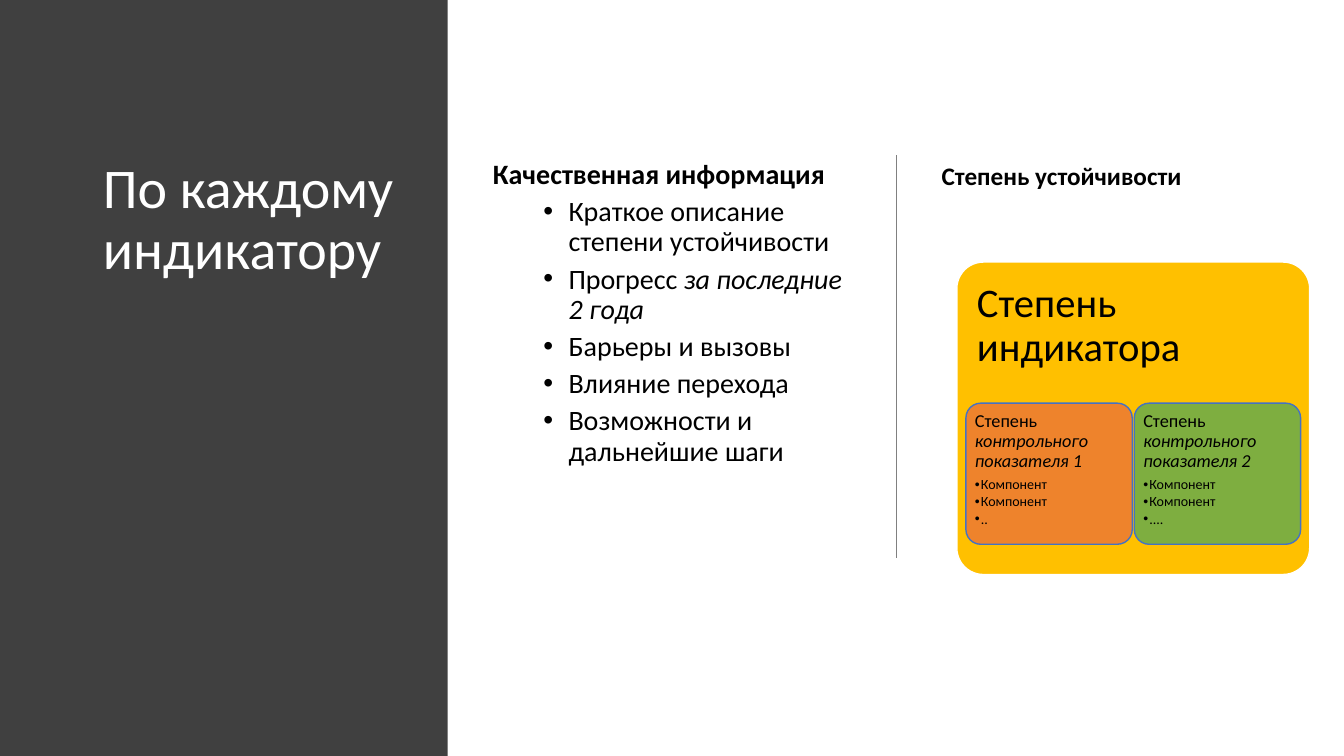
from lxml import etree
from pptx import Presentation
from pptx.dml.color import RGBColor
from pptx.enum.shapes import MSO_CONNECTOR, MSO_SHAPE
from pptx.enum.text import MSO_ANCHOR, MSO_AUTO_SIZE, PP_ALIGN
from pptx.oxml.ns import qn
from pptx.util import Pt

RECT, ROUND = MSO_SHAPE.RECTANGLE, MSO_SHAPE.ROUNDED_RECTANGLE
STRAIGHT = MSO_CONNECTOR.STRAIGHT
TOP, LEFT = MSO_ANCHOR.TOP, PP_ALIGN.LEFT
GROW, FIXED = MSO_AUTO_SIZE.SHAPE_TO_FIT_TEXT, MSO_AUTO_SIZE.NONE

BLACK = RGBColor(0x00, 0x00, 0x00)
WHITE = RGBColor(0xFF, 0xFF, 0xFF)
DARK = RGBColor(0x40, 0x40, 0x40)
GRAY = RGBColor(0x80, 0x80, 0x80)
GOLD = RGBColor(0xFF, 0xC0, 0x00)
ORANGE = RGBColor(0xED, 0x7D, 0x31)
GREEN = RGBColor(0x70, 0xAD, 0x47)
BLUE = RGBColor(0x44, 0x72, 0xC4)

EMU = 9144  # 100 px to the inch
WIDE, HIGH = 1333, 750


def px(*nums):
    return [num * EMU for num in nums]


def put(item, vals):
    for name, val in vals.items():
        setattr(item, name, val)


class Deck:
    def __init__(self, font):
        self.font = font
        self.prs = Presentation()
        self.prs.slide_width, self.prs.slide_height = px(WIDE, HIGH)
        self.slide = self.prs.slides.add_slide(self.prs.slide_layouts[5])
        self.shapes = self.slide.shapes

    def shape(self, kind, box, fill, line=None, round=None, alpha=None):
        item = self.shapes.add_shape(kind, *px(*box))
        item.shadow.inherit = False
        item.fill.solid()
        item.fill.fore_color.rgb = fill
        if alpha:
            color = item.fill._xPr.find(qn("a:solidFill"))[0]
            etree.SubElement(color, qn("a:alpha"), val=str(alpha * 1000))
        if line is None:
            item.line.fill.background()
        else:
            item.line.color.rgb = line
            item.line.width = Pt(1)
        if round:
            item.adjustments[0] = round
        return item

    def rule(self, x, top, end, color):
        item = self.shapes.add_connector(STRAIGHT, *px(x, top, x, end))
        item.line.color.rgb = color
        item.line.width = Pt(1)
        etree.SubElement(item._element.spPr, qn("a:effectLst"))

    def para(self, para, runs, size, color=BLACK, bold=False, bullet=None, **form):
        """Runs alternate between upright and italic text."""
        put(para, {"alignment": LEFT, **form})
        if bullet:
            para.level = 1
            props = para._p.get_or_add_pPr()
            props.set("marL", str(bullet * EMU))
            props.set("indent", str(-min(bullet, 25) * EMU))
            etree.SubElement(props, qn("a:buFont"), typeface="Arial")
            etree.SubElement(props, qn("a:buChar"), char="•")
        for i, text in enumerate(runs):
            run = para.add_run()
            run.text = text
            put(run.font, {"name": self.font, "size": Pt(size),
                           "bold": bold, "italic": i % 2 == 1})
            run.font.color.rgb = color

    def fill(self, frame, paras, **form):
        put(frame, {"word_wrap": True, "auto_size": FIXED,
                    "vertical_anchor": TOP, **form})
        for i, vals in enumerate(paras):
            para = frame.add_paragraph() if i else frame.paragraphs[0]
            self.para(para, **vals)

    def text(self, box, paras, inset=None, **form):
        if inset:
            sides = ("margin_left", "margin_top", "margin_right", "margin_bottom")
            form.update(zip(sides, px(*inset)))
        self.fill(self.shapes.add_textbox(*px(*box)).text_frame, paras, **form)

    def title(self, box, text, size, color):
        item = self.shapes.title
        put(item, dict(zip(("left", "top", "width", "height"), px(*box))))
        self.fill(item.text_frame, [{"runs": [text], "size": size,
                                     "color": color, "line_spacing": 0.9}])
        # Bring the title in front of the side panel
        self.shapes._spTree.append(item._element)


def main():
    deck = Deck("Calibri")

    # Side panel and title
    deck.shape(RECT, (0, 0, 444, HIGH), DARK)
    deck.title((92, 154, 317, 477), "По каждому индикатору", 40, WHITE)

    # Quality points
    points = [
        ["Краткое описание степени устойчивости"],
        ["Прогресс ", "за последние 2 года"],
        ["Барьеры и вызовы"],
        ["Влияние перехода"],
        ["Возможности и дальнейшие шаги"],
    ]
    head = {"runs": ["Качественная информация"], "size": 20, "bold": True,
            "line_spacing": 0.9, "space_before": Pt(10)}
    deck.text((479, 154, 375, 477), [head] + [
        {"runs": runs, "size": 20, "bullet": 75, "line_spacing": 0.9,
         "space_before": Pt(5)} for runs in points])
    deck.rule(889, 154, 554, GRAY)

    # Indicator panel
    deck.shape(ROUND, (949, 260, 350, 310), GOLD, WHITE, 0.085)
    deck.text((957, 268, 334, 295),
              [{"runs": ["Степень индикатора"], "size": 29, "line_spacing": 0.9}],
              (12, 12, 12, 191))

    # Benchmark cards
    cards = [(ORANGE, ".."), (GREEN, "....")]
    for i, (color, last) in enumerate(cards):
        left = 958 + 167 * i
        deck.shape(ROUND, (left, 400, 165, 140), color, BLUE, 0.105, 90)
        name = {"runs": ["Степень ", f"контрольного показателя {i + 1}"],
                "size": 13, "line_spacing": 0.9, "space_after": Pt(4.5)}
        parts = [{"runs": [part], "size": 10, "bullet": 6, "line_spacing": 0.9,
                  "space_after": Pt(1.5)}
                 for part in ("Компонент", "Компонент", last)]
        deck.text((left + 4, 404, 156, 131), [name] + parts, (5, 5, 5, 5))

    # Panel heading
    deck.text((924, 154, 260, 40),
              [{"runs": ["Степень устойчивости"], "size": 18, "bold": True}],
              word_wrap=False, auto_size=GROW)

    deck.prs.save("out.pptx")


if __name__ == "__main__":
    main()
